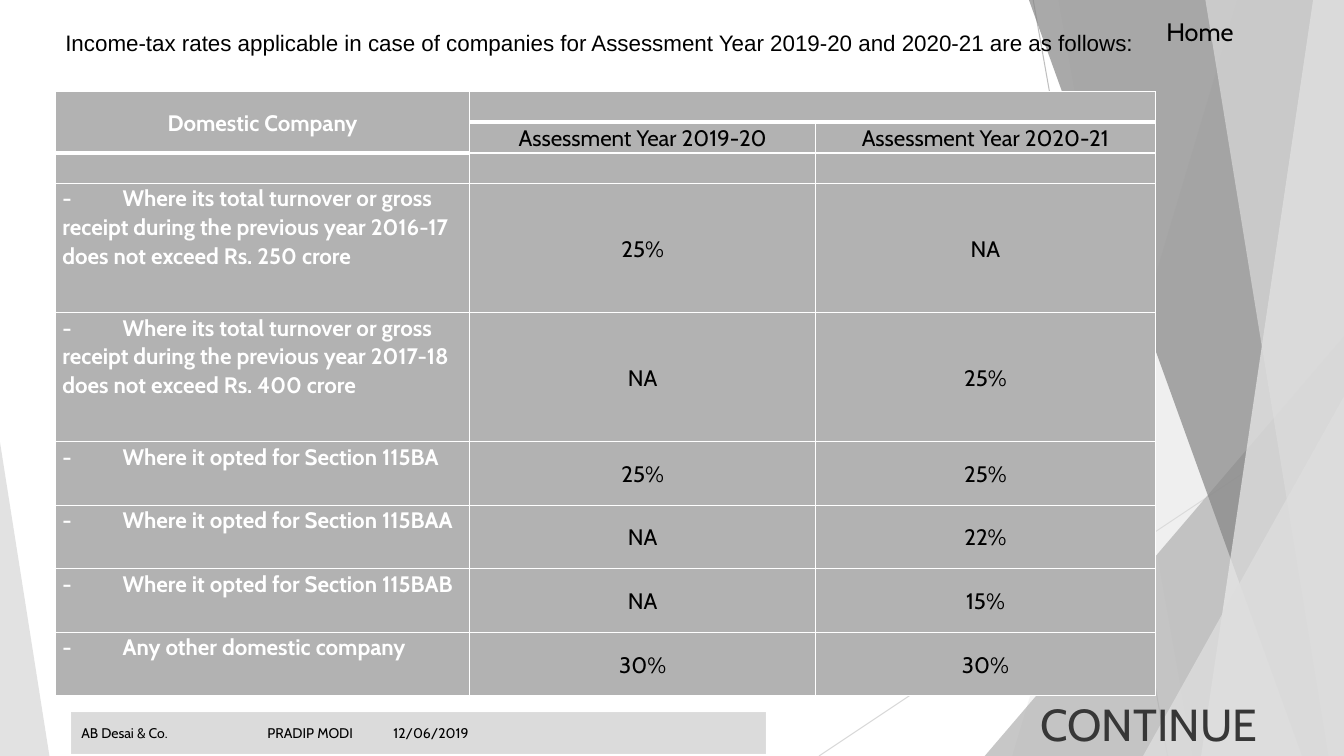
from dataclasses import dataclass

from lxml.etree import SubElement
from pptx import Presentation
from pptx.dml.color import RGBColor
from pptx.enum.shapes import MSO_CONNECTOR, MSO_SHAPE
from pptx.enum.text import MSO_ANCHOR, PP_ALIGN
from pptx.oxml.ns import qn
from pptx.util import Pt


@dataclass(frozen=True)
class Theme:
    font: str = "Cabin"
    plain: str = "Arial"
    black: str = "000000"
    white: str = "FFFFFF"
    dark: str = "373737"
    mid: str = "858585"
    grey: str = "B2B2B2"
    rule: str = "BFBFBF"
    soft: str = "D9D9D9"
    light: str = "DDDDDD"
    pale: str = "EBEBEB"
    small: int = 10
    body: int = 16
    link: int = 18
    large: int = 32


WIDTH, HEIGHT = 960, 540


def rgb(code):
    return RGBColor.from_string(code)


def write(frame, text, size, color, font, bold=False, align=PP_ALIGN.LEFT,
          anchor=MSO_ANCHOR.TOP, tabs=(), space=None, after=0):
    """Put one formatted paragraph into a text frame."""
    frame.word_wrap = True
    frame.vertical_anchor = anchor
    para = frame.paragraphs[0]
    para.alignment = align
    if space:
        para.line_spacing = space
        para.space_after = Pt(after)
    run = para.add_run()
    run.text = text
    run.font.size = Pt(size)
    run.font.name = font
    run.font.bold = bold
    run.font.color.rgb = rgb(color)
    if tabs:
        stops = SubElement(para._p.get_or_add_pPr(), qn("a:tabLst"))
        for stop in tabs:
            SubElement(stops, qn("a:tab"), pos=str(Pt(stop)), algn="l")


class Deck:
    def __init__(self, theme):
        self.theme = theme
        self.show = Presentation()
        self.show.slide_width, self.show.slide_height = Pt(WIDTH), Pt(HEIGHT)
        self.slide = self.show.slides.add_slide(self.show.slide_layouts[6])
        self.shapes = self.slide.shapes

    def paint(self, shape, color, alpha, edge=None):
        shape.shadow.inherit = False
        shape.fill.solid()
        shape.fill.fore_color.rgb = rgb(color)
        tint = shape._element.spPr.find(qn("a:solidFill"))[0]
        SubElement(tint, qn("a:alpha"), val=str(alpha * 1000))
        if edge:
            shape.line.color.rgb = rgb(edge)
            shape.line.width = Pt(0.75)
        else:
            shape.line.fill.background()

    def line(self, start, end, color):
        ends = [Pt(v) for v in (*start, *end)]
        line = self.shapes.add_connector(MSO_CONNECTOR.STRAIGHT, *ends)
        line.line.color.rgb = rgb(color)
        line.line.width = Pt(0.75)
        SubElement(line._element.spPr, qn("a:effectLst"))

    def shard(self, top, low, color, alpha):
        """Full-height band from a slanted left side to the right slide edge."""
        pen = self.shapes.build_freeform(Pt(top), Pt(0))
        points = [(WIDTH, 0), (WIDTH, HEIGHT), (low, HEIGHT)]
        pen.add_line_segments([(Pt(x), Pt(y)) for x, y in points], close=True)
        self.paint(pen.convert_to_shape(), color, alpha)

    def wedge(self, left, top, width, tip, color, alpha):
        """Right triangle standing on the bottom slide edge."""
        shape = self.shapes.add_shape(MSO_SHAPE.ISOSCELES_TRIANGLE, Pt(left),
                                      Pt(top), Pt(width), Pt(HEIGHT - top))
        shape.adjustments[0] = tip
        self.paint(shape, color, alpha)

    def label(self, text, box, **style):
        shape = self.shapes.add_textbox(*[Pt(v) for v in box])
        write(shape.text_frame, text, **style)

    def bar(self, text, box, fill, alpha, edge, **style):
        shape = self.shapes.add_shape(MSO_SHAPE.RECTANGLE, *[Pt(v) for v in box])
        self.paint(shape, fill, alpha, edge)
        write(shape.text_frame, text, **style)

    def cell(self, cell, text, heavy=False, **style):
        look = self.theme
        cell.margin_left = cell.margin_right = Pt(5)
        cell.margin_top = cell.margin_bottom = 0
        props = cell._tc.get_or_add_tcPr()
        for side in "LRTB":
            width = 3 if heavy and side == "B" else 1
            edge = SubElement(props, qn(f"a:ln{side}"), w=str(Pt(width)))
            fill = SubElement(edge, qn("a:solidFill"))
            SubElement(fill, qn("a:srgbClr"), val=look.white)
        cell.fill.solid()
        cell.fill.fore_color.rgb = rgb(look.grey)
        if text:
            write(cell.text_frame, text, size=look.body, font=look.font,
                  space=1.07, after=8, **style)
            # A cell keeps its anchor in its own properties
            cell.text_frame._txBody.bodyPr.attrib.clear()
            cell.vertical_anchor = style["anchor"]
        else:
            SubElement(cell.text_frame.paragraphs[0]._p, qn("a:endParaRPr"),
                       sz=str(look.small * 100))

    def table(self, rows, left, top, widths, heights):
        look = self.theme
        grid = self.shapes.add_table(len(rows), len(widths), Pt(left), Pt(top),
                                     Pt(sum(widths)), Pt(sum(heights))).table
        for column, width in zip(grid.columns, widths):
            column.width = Pt(width)
        for row, height in zip(grid.rows, heights):
            row.height = Pt(height)
        for r, row in enumerate(rows):
            for c, text in enumerate(row):
                item = text.startswith("-")
                self.cell(
                    grid.cell(r, c), text,
                    heavy=r == 0 or (r, c) == (1, 0),
                    color=look.black if c else look.white,
                    bold=c == 0,
                    align=PP_ALIGN.LEFT if item else PP_ALIGN.CENTER,
                    anchor=MSO_ANCHOR.TOP if item else MSO_ANCHOR.MIDDLE,
                    tabs=(43,) if item else ())
        grid.cell(0, 0).merge(grid.cell(1, 0))
        grid.cell(0, 1).merge(grid.cell(0, 2))


def main():
    look = Theme()
    deck = Deck(look)

    # Backdrop of slanted grey facets
    deck.line((738, 0), (834, HEIGHT), look.rule)
    deck.line((WIDTH, 290), (585, HEIGHT), look.soft)
    deck.shard(884, 723, look.light, 30)
    deck.shard(756, 852, look.light, 20)
    deck.wedge(703.4, 240, 256.6, 1, look.grey, 72)
    deck.shard(735, 930, look.mid, 70)
    deck.shard(938, 858, look.pale, 70)
    deck.shard(861, 949, look.light, 65)
    deck.wedge(816.5, 283, 143.5, 1, look.light, 80)
    deck.wedge(0, 316, 35.3, 0, look.light, 85)

    # Tax rates
    turnover = ("-\tWhere its total turnover or gross receipt during the "
                "previous year {} does not exceed Rs. {} crore")
    section = "-\tWhere it opted for Section {}"
    rows = [
        ("Domestic Company", "", ""),
        ("", "Assessment Year 2019-20", "Assessment Year 2020-21"),
        ("", "", ""),
        (turnover.format("2016-17", 250), "25%", "NA"),
        (turnover.format("2017-18", 400), "NA", "25%"),
        (section.format("115BA"), "25%", "25%"),
        (section.format("115BAA"), "NA", "22%"),
        (section.format("115BAB"), "NA", "15%"),
        ("-\tAny other domestic company", "30%", "30%"),
    ]
    deck.table(rows, 39.6, 65.5, widths=(296, 247, 242.6),
               heights=[21.9] * 3 + [92.2] * 2 + [45.4] * 4)

    # Title, links and footer
    deck.label("Income-tax rates applicable in case of companies for "
               "Assessment Year 2019-20 and 2020-21 are as follows:",
               (39.6, 16.8, 787, 26.6), size=look.body, color=look.black,
               font=look.plain, anchor=MSO_ANCHOR.MIDDLE)
    deck.label("CONTINUE", (736, 494, 220, 46), size=look.large,
               color=look.dark, font=look.font)
    deck.bar("AB Desai & Co.\tPRADIP MODI\t12/06/2019", (51, 509, 496, 29),
             look.grey, 46, look.light, size=look.small, color=look.black,
             font=look.font, anchor=MSO_ANCHOR.MIDDLE, tabs=(133, 223))
    deck.label("Home", (826, 8, 130, 29), size=look.link,
               color=look.black, font=look.font)

    deck.show.save("out.pptx")


if __name__ == "__main__":
    main()
